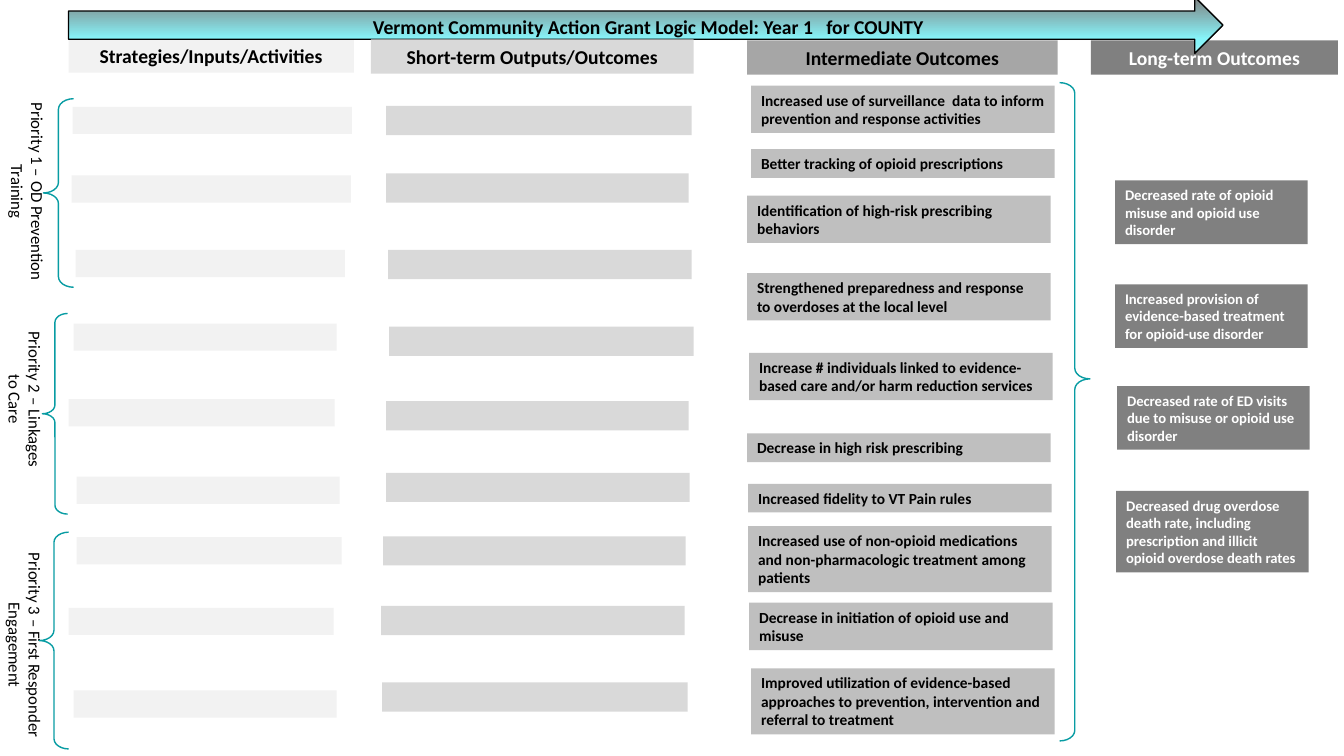
from lxml import etree
from pptx import Presentation
from pptx.dml.color import RGBColor
from pptx.enum.shapes import MSO_SHAPE
from pptx.enum.text import MSO_ANCHOR, MSO_AUTO_SIZE, PP_ALIGN
from pptx.oxml.ns import qn
from pptx.util import Inches, Pt

RECTANGLE = MSO_SHAPE.RECTANGLE
ARROW = MSO_SHAPE.RIGHT_ARROW
BRACE = MSO_SHAPE.LEFT_BRACE
LEFT, CENTER = PP_ALIGN.LEFT, PP_ALIGN.CENTER
TOP, MIDDLE = MSO_ANCHOR.TOP, MSO_ANCHOR.MIDDLE
GROW = MSO_AUTO_SIZE.SHAPE_TO_FIT_TEXT

# Content: boxes are (left, top, width, height)
TITLE = "Vermont Community Action Grant Logic Model: Year 1   for COUNTY"
TITLE_BOX = (3.6, 0.1, 5.79, 0.57)
ARROW_BOX = (0.68, -0.03, 11.45, 0.56)
ARROW_STOPS = [(0, "808080"), (74, "86F4F9"), (83, "86F4F9"), (100, "AEF8FB")]

# Headers: text, left, top, width, fill, text colour
HEADERS_BEHIND_ARROW = [
    ("Strategies/Inputs/Activities", 0.68, 0.38, 2.83, "F2F2F2", "000000"),
    ("Long-term Outcomes", 10.82, 0.4, 2.45, "808080", "FFFFFF"),
]
HEADERS_OVER_ARROW = [
    ("Intermediate Outcomes", 7.41, 0.4, 3.08, "A6A6A6", "000000"),
    ("Short-term Outputs/Outcomes", 3.68, 0.39, 3.2, "D9D9D9", "000000"),
]
HEADER_HEIGHT = 0.34

# Empty bars to fill in: left, top, width
STRATEGY_BARS = [
    (0.72, 1.06, 2.77), (0.71, 1.74, 2.77), (0.75, 2.48, 2.67),
    (0.73, 3.21, 2.61), (0.68, 3.96, 2.64), (0.76, 4.73, 2.61),
    (0.76, 5.33, 2.63), (0.68, 6.03, 2.63), (0.73, 6.85, 2.61),
]
OUTPUT_BARS = [
    (3.83, 1.05, 3.03), (3.83, 1.72, 3), (3.85, 2.48, 3.01),
    (3.86, 3.24, 3.02), (3.83, 3.98, 3), (3.83, 4.69, 3.01),
    (3.8, 5.32, 3), (3.78, 6.01, 3.01), (3.79, 6.77, 3.03),
]
BAR_COLUMNS = [(STRATEGY_BARS, 0.27, "F2F2F2"), (OUTPUT_BARS, 0.29, "D9D9D9")]

# Outcomes: text, left, top, number of lines
INTERMEDIATE = [
    ("Increased use of surveillance  data to inform prevention and response activities", 7.45, 0.85, 2),
    ("Better tracking of opioid prescriptions", 7.45, 1.48, 1),
    ("Identification of high-risk prescribing behaviors", 7.41, 1.94, 2),
    ("Strengthened preparedness and response to overdoses at the local level", 7.41, 2.71, 2),
    ("Increase # individuals linked to evidence-based care and/or harm reduction services", 7.43, 3.5, 2),
    ("Decrease in high risk prescribing", 7.41, 4.3, 1),
    ("Increased fidelity to VT Pain rules", 7.42, 4.8, 1),
    ("Increased use of non-opioid medications and non-pharmacologic treatment among patients", 7.42, 5.22, 3),
    ("Decrease in initiation of opioid use and misuse", 7.43, 5.98, 2),
    ("Improved utilization of evidence-based approaches to prevention, intervention and referral to treatment",
     7.45, 6.63, 3),
]
LONG_TERM = [
    ("Decreased rate of opioid misuse and opioid use disorder", 11.06, 1.79, 3),
    ("Increased provision of evidence-based treatment for opioid-use disorder", 11.06, 2.82, 3),
    ("Decreased rate of ED visits due to misuse or opioid use disorder", 11.08, 3.83, 3),
    ("Decreased drug overdose death rate, including prescription and illicit opioid overdose death rates",
     11.07, 4.87, 4),
]
# Column: outcomes, width, line height, fill, text colour, text size
OUTCOME_COLUMNS = [
    (INTERMEDIATE, 3.01, 0.185, "BFBFBF", "000000", 11),
    (LONG_TERM, 1.91, 0.177, "808080", "FFFFFF", 10.5),
]
OUTCOME_PADDING = 0.1

# Priorities: text, label box before turning, brace box
PRIORITIES = [
    ("Priority 1 – OD Prevention Training", (-0.79, 1.65, 2.13, 0.5), (0.43, 0.98, 0.3, 1.87)),
    ("Priority 2 – Linkages to Care", (-0.57, 3.71, 1.64, 0.5), (0.42, 3.11, 0.25, 1.99)),
    ("Priority 3 – First Responder Engagement", (-0.78, 6.15, 2.06, 0.5), (0.39, 5.28, 0.29, 2.15)),
]
OUTCOME_BRACE = (10.51, 0.82, 0.3, 6.53)
BRACE_COLOR = "089CA3"


def color(value):
    return RGBColor.from_string(value)


def add_shape(kind, box, fill=None, line=None):
    shape = slide.shapes.add_shape(kind, *map(Inches, box))
    shape.shadow.inherit = False
    if fill:
        shape.fill.solid()
        shape.fill.fore_color.rgb = color(fill)
    else:
        shape.fill.background()
    if line:
        shape.line.color.rgb = color(line)
        shape.line.width = Pt(1)
    else:
        shape.line.fill.background()
    return shape


def write(shape, text, size, text_color="000000", bold=True, align=LEFT, anchor=MIDDLE):
    frame = shape.text_frame
    frame_format = {"word_wrap": True, "auto_size": GROW, "vertical_anchor": anchor}
    for name, value in frame_format.items():
        setattr(frame, name, value)
    paragraph = frame.paragraphs[0]
    paragraph.alignment = align
    run = paragraph.add_run()
    run.text = text
    for name, value in {"name": "Calibri", "size": Pt(size), "bold": bold}.items():
        setattr(run.font, name, value)
    run.font.color.rgb = color(text_color)


def add_text(box, text, size, **text_format):
    text_box = slide.shapes.add_textbox(*map(Inches, box))
    write(text_box, text, size, anchor=TOP, **text_format)
    return text_box


def add_headers(headers):
    for text, left, top, width, fill, text_color in headers:
        header = add_shape(RECTANGLE, (left, top, width, HEADER_HEIGHT), fill)
        write(header, text, 14, text_color, align=CENTER)


def add_brace(box, point=0.5):
    brace = add_shape(BRACE, box, line=BRACE_COLOR)
    brace.adjustments[0] = 0.35
    brace.adjustments[1] = point
    return brace


presentation = Presentation()
presentation.slide_width = Inches(13.33)
presentation.slide_height = Inches(7.5)
slide = presentation.slides.add_slide(presentation.slide_layouts[6])

# Headers and title arrow
add_headers(HEADERS_BEHIND_ARROW)
arrow = add_shape(ARROW, ARROW_BOX, line="000000")
arrow.fill.gradient()
arrow.fill.gradient_angle = 270
stops = arrow.element.spPr.find(qn("a:gradFill")).find(qn("a:gsLst"))
for stop in list(stops):
    stops.remove(stop)
for position, value in ARROW_STOPS:
    stop = etree.SubElement(stops, qn("a:gs"), pos=str(position * 1000))
    etree.SubElement(stop, qn("a:srgbClr"), val=value)
add_headers(HEADERS_OVER_ARROW)
add_text(TITLE_BOX, TITLE, 14)

# Empty bars
for bars, height, fill in BAR_COLUMNS:
    for bar in bars:
        add_shape(RECTANGLE, (*bar, height), fill)

# Outcomes
for outcomes, width, line_height, fill, text_color, size in OUTCOME_COLUMNS:
    for text, left, top, lines in outcomes:
        height = OUTCOME_PADDING + lines * line_height
        outcome = add_shape(RECTANGLE, (left, top, width, height), fill)
        write(outcome, text, size, text_color)

# Priorities and braces
for text, label_box, brace_box in PRIORITIES:
    label = add_text(label_box, text, 12, bold=False, align=CENTER)
    label.rotation = 90
    add_brace(brace_box)
add_brace(OUTCOME_BRACE, 0.55).rotation = 180

presentation.save("out.pptx")
